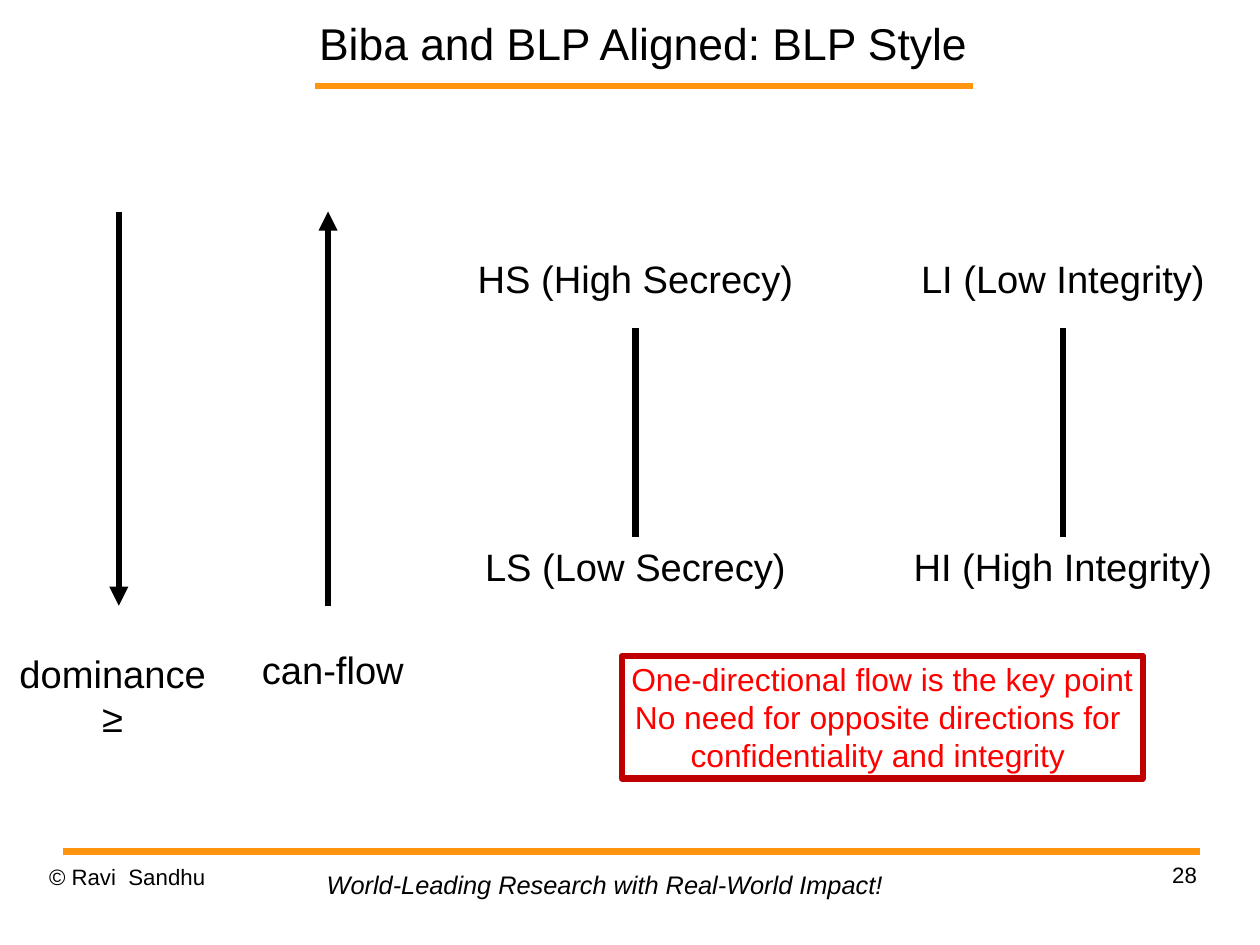
from dataclasses import dataclass

from lxml.etree import SubElement
from pptx import Presentation
from pptx.dml.color import RGBColor
from pptx.enum.shapes import MSO_CONNECTOR as Connector, MSO_SHAPE as Shape
from pptx.enum.text import MSO_ANCHOR as Anchor, MSO_AUTO_SIZE as AutoSize, PP_ALIGN as Align
from pptx.oxml.ns import qn
from pptx.util import Cm, Pt


@dataclass(frozen=True)
class Theme:
    font: str = "Arial"
    ink: RGBColor = RGBColor(0x00, 0x00, 0x00)
    rule: RGBColor = RGBColor(0xFF, 0x95, 0x0E)
    frame: RGBColor = RGBColor(0xC0, 0x00, 0x00)
    key: RGBColor = RGBColor(0xFF, 0x00, 0x00)
    title_size: int = 28
    label_size: int = 24
    key_size: int = 20
    slogan_size: int = 16
    footer_size: int = 14
    line_width: float = 4
    rule_width: float = 4.31


NO_INSETS = (0, 0)
LABEL_INSETS = (0.18, 0.08)
WIDE_INSETS = (0.25, 0.13)


class SlideBuilder:
    def __init__(self, slide, theme):
        self.slide = slide
        self.theme = theme

    def fill_text(self, shape, lines, size, color=None, align=Align.LEFT, spacing=None,
                  insets=LABEL_INSETS, anchor=Anchor.TOP, fit=True, italic=False):
        """Fill a shape with one paragraph per line; fit grows the shape without wrapping."""
        frame = shape.text_frame
        frame.text = "\n".join(lines)
        frame.word_wrap = not fit
        frame.auto_size = AutoSize.SHAPE_TO_FIT_TEXT if fit else AutoSize.NONE
        frame.vertical_anchor = anchor
        frame.margin_left = frame.margin_right = Cm(insets[0])
        frame.margin_top = frame.margin_bottom = Cm(insets[1])
        for paragraph in frame.paragraphs:
            paragraph.alignment = align
            if spacing:
                paragraph.line_spacing = spacing
            font = paragraph.font
            font.name = self.theme.font
            font.size = Pt(size)
            font.italic = italic
            font.color.rgb = color or self.theme.ink

    def title(self, text, left, top, width, height):
        shape = self.slide.shapes.title
        shape.left, shape.top, shape.width, shape.height = map(Cm, (left, top, width, height))
        self.fill_text(shape, [text], self.theme.title_size, align=Align.CENTER,
                       insets=NO_INSETS, anchor=Anchor.MIDDLE, fit=False)

    def text(self, lines, left, top, width, height, size=None, **style):
        shape = self.slide.shapes.add_textbox(*map(Cm, (left, top, width, height)))
        self.fill_text(shape, lines, size or self.theme.label_size, **style)

    def line(self, x1, y1, x2, y2, color=None, width=None, arrow=False):
        connector = self.slide.shapes.add_connector(
            Connector.STRAIGHT, *map(Cm, (x1, y1, x2, y2)))
        connector.line.color.rgb = color or self.theme.ink
        connector.line.width = Pt(width or self.theme.line_width)
        properties = connector._element.spPr
        if arrow:
            SubElement(properties.find(qn("a:ln")), qn("a:tailEnd"), type="triangle")
        SubElement(properties, qn("a:effectLst"))

    def rule(self, x1, x2, y):
        self.line(x1, y, x2, y, self.theme.rule, self.theme.rule_width)

    def key_box(self, lines, left, top, width, height):
        shape = self.slide.shapes.add_shape(
            Shape.RECTANGLE, *map(Cm, (left, top, width, height)))
        shape.shadow.inherit = False
        shape.fill.background()
        shape.line.color.rgb = self.theme.frame
        shape.line.width = Pt(self.theme.line_width)
        self.fill_text(shape, lines, self.theme.key_size, self.theme.key, Align.CENTER)

    def lattice(self, high, low, center):
        """Draw two levels, one above the other, joined by a line."""
        width = 7.4
        for label, top in ((high, 5.74), (low, 12.14)):
            self.text([label], center - width / 2, top, width, 1.04,
                      align=Align.CENTER, spacing=0.87)
        self.line(center, 7.29, center, 11.94)


def main():
    theme = Theme()
    presentation = Presentation()
    presentation.slide_width, presentation.slide_height = Cm(28), Cm(21)
    slide = presentation.slides.add_slide(presentation.slide_layouts[5])
    builder = SlideBuilder(slide, theme)

    builder.rule(7.01, 21.62, 1.91)
    builder.rule(1.4, 26.67, 18.92)
    builder.title("Biba and BLP Aligned: BLP Style", 6.12, 0, 16.33, 1.91)

    footer = dict(size=theme.footer_size, spacing=1.01, insets=NO_INSETS, fit=False)
    builder.text(["© Ravi  Sandhu"], 1.09, 19.18, 6.53, 1.45, **footer)
    builder.text(["World-Leading Research with Real-World Impact!"], 7.01, 19.18, 12.9, 0.94,
                 size=theme.slogan_size, insets=WIDE_INSETS, italic=True)
    builder.text(["28"], 20.07, 19.13, 6.53, 1.45, align=Align.RIGHT, **footer)

    arrow_top, arrow_bottom = 4.7, 13.46
    builder.line(2.64, arrow_top, 2.64, arrow_bottom, arrow=True)
    builder.text(["dominance", "≥"], 0.03, 14.43, 4.95, 2.26,
                 align=Align.CENTER, spacing=0.97)
    builder.line(7.29, arrow_bottom, 7.29, arrow_top, arrow=True)
    builder.text(["can-flow"], 5.64, 14.43, 3.94, 1.17, spacing=0.87)

    builder.lattice("HS (High Secrecy)", "LS (Low Secrecy)", 14.12)
    builder.lattice("LI (Low Integrity)", "HI (High Integrity)", 23.62)
    builder.key_box(["One-directional flow is the key point",
                     "No need for opposite directions for ",
                     "confidentiality and integrity "], 13.82, 14.58, 11.58, 2.72)

    presentation.save("out.pptx")


if __name__ == "__main__":
    main()
